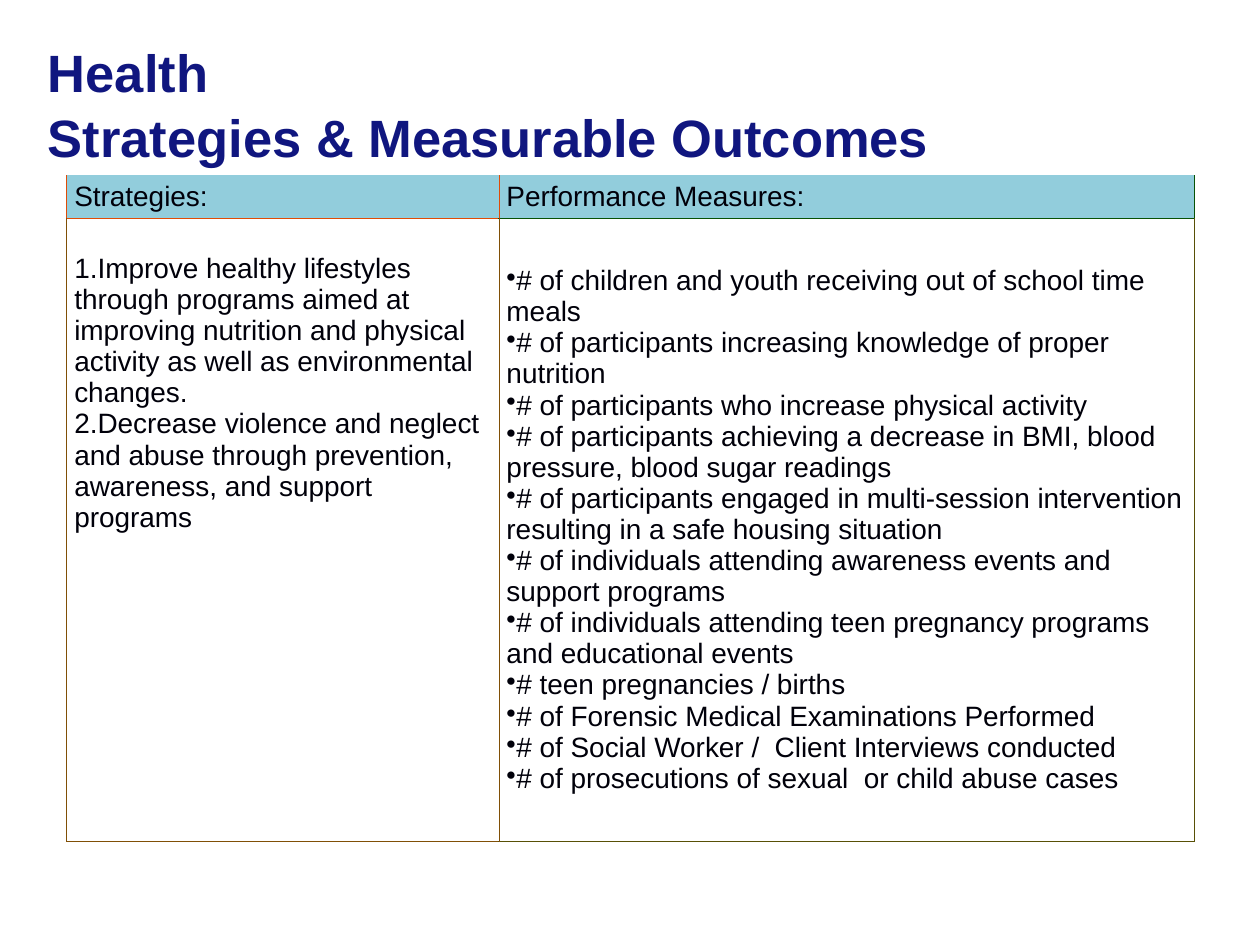
from dataclasses import dataclass

from lxml import etree
from pptx import Presentation
from pptx.dml.color import RGBColor
from pptx.enum import text as tx
from pptx.oxml import ns
from pptx.util import Inches, Pt


@dataclass(frozen=True)
class Theme:
    """Colours and type sizes of the slide."""
    font: str = "Arial"
    title_size: int = 30
    body_size: int = 16
    title: str = "10167F"
    body: str = "00000A"
    header: str = "92CDDC"
    paper: str = "FFFFFF"
    orange: str = "E04C06"
    green: str = "085206"
    brown: str = "804F06"
    olive: str = "585006"
    rule: float = 0.6


THEME = Theme()
TITLE = "Health\vStrategies & Measurable Outcomes"
HEADINGS = ["Strategies:", "Performance Measures:"]
STRATEGIES = [
    "Improve healthy lifestyles through programs aimed at improving nutrition "
    "and physical activity as well as environmental changes.",
    "Decrease violence and neglect and abuse through prevention, awareness, "
    "and support programs",
]
MEASURES = [
    "# of children and youth receiving out of school time meals",
    "# of participants increasing knowledge of proper nutrition",
    "# of participants who increase physical activity",
    "# of participants achieving a decrease in BMI, blood pressure, blood sugar readings",
    "# of participants engaged in multi-session intervention resulting in a safe housing situation",
    "# of individuals attending awareness events and support programs",
    "# of individuals attending teen pregnancy programs and educational events",
    "# teen pregnancies / births",
    "# of Forensic Medical Examinations Performed",
    "# of Social Worker /  Client Interviews conducted",
    "# of prosecutions of sexual  or child abuse cases",
]


def add_marker(paragraph, tag, **attributes):
    """Give a paragraph a bullet or number with no indent."""
    properties = paragraph._p.get_or_add_pPr()
    properties.set("marL", "0")
    properties.set("indent", "0")
    etree.SubElement(properties, ns.qn(f"a:{tag}"), **attributes)


def write(frame, lines, size=THEME.body_size, color=THEME.body, bold=False,
          spacing=None, marker=None):
    """Write one paragraph per line in the given format."""
    for index, line in enumerate(lines):
        paragraph = frame.paragraphs[0] if index == 0 else frame.add_paragraph()
        paragraph.alignment = tx.PP_ALIGN.LEFT
        if spacing:
            paragraph.line_spacing = spacing
        if marker:
            add_marker(paragraph, **marker)
        paragraph.text = line
        for run in paragraph.runs:
            run.font.name = THEME.font
            run.font.size = Pt(size)
            run.font.bold = bold
            run.font.color.rgb = RGBColor.from_string(color)


def format_cell(cell, fill, anchor, edges, top=0.03):
    """Set a cell's fill, margins and its left, right, top and bottom edges."""
    cell.margin_left = cell.margin_right = Inches(0.06)
    cell.margin_top, cell.margin_bottom = Inches(top), Inches(0.03)
    cell.vertical_anchor = anchor
    cell.fill.solid()
    cell.fill.fore_color.rgb = RGBColor.from_string(fill)
    properties = cell._tc.get_or_add_tcPr()
    for index, (side, color) in enumerate(zip("LRTB", edges)):
        edge = etree.Element(ns.qn(f"a:ln{side}"), w=str(Pt(THEME.rule)))
        if color:
            paint = etree.SubElement(edge, ns.qn("a:solidFill"))
            etree.SubElement(paint, ns.qn("a:srgbClr"), val=color)
        else:
            etree.SubElement(edge, ns.qn("a:noFill"))
        properties.insert(index, edge)


def place_title(slide, left, top, width, height):
    """Place the two-line title in its box."""
    title = slide.shapes.title
    title.left, title.top, title.width, title.height = left, top, width, height
    frame = title.text_frame
    frame.word_wrap = True
    frame.auto_size = tx.MSO_AUTO_SIZE.NONE
    frame.vertical_anchor = tx.MSO_ANCHOR.MIDDLE
    frame.margin_left = frame.margin_right = Inches(0.06)
    frame.margin_top, frame.margin_bottom = Inches(0.05), Inches(0.13)
    write(frame, [TITLE], size=THEME.title_size, color=THEME.title,
          bold=True, spacing=1.04)


def place_outcomes(slide, left, top, width, height):
    """Place the table of strategies and measures in its box."""
    table = slide.shapes.add_table(2, 2, left, top, width, height).table
    table.first_row = table.horz_banding = False
    table.columns[0].width = Inches(3.43)
    table.columns[1].width = width - Inches(3.43)
    table.rows[0].height = Inches(0.34)
    table.rows[1].height = height - Inches(0.34)

    orange, green, brown, olive = THEME.orange, THEME.green, THEME.brown, THEME.olive
    middle = tx.MSO_ANCHOR.MIDDLE
    header_edges = [(orange, orange, None, orange), (orange, green, None, green)]
    for column, heading in enumerate(HEADINGS):
        cell = table.cell(0, column)
        write(cell.text_frame, [heading])
        format_cell(cell, THEME.header, middle, header_edges[column])

    strategies, measures = table.cell(1, 0), table.cell(1, 1)
    write(strategies.text_frame, STRATEGIES,
          marker={"tag": "buAutoNum", "type": "arabicPeriod"})
    format_cell(strategies, THEME.paper, tx.MSO_ANCHOR.TOP,
                (brown, brown, orange, brown), top=0.28)
    write(measures.text_frame, MEASURES, marker={"tag": "buChar", "char": "•"})
    format_cell(measures, THEME.paper, middle, (brown, olive, green, olive))


def main():
    """Build and save the slide."""
    deck = Presentation()
    deck.slide_width, deck.slide_height = Inches(10), Inches(7.5)
    slide = deck.slides.add_slide(deck.slide_layouts[5])
    place_title(slide, Inches(0.32), Inches(0.23), Inches(7.92), Inches(1.25))
    place_outcomes(slide, Inches(0.53), Inches(1.39), Inches(8.95), Inches(5.29))
    deck.save("out.pptx")


if __name__ == "__main__":
    main()
